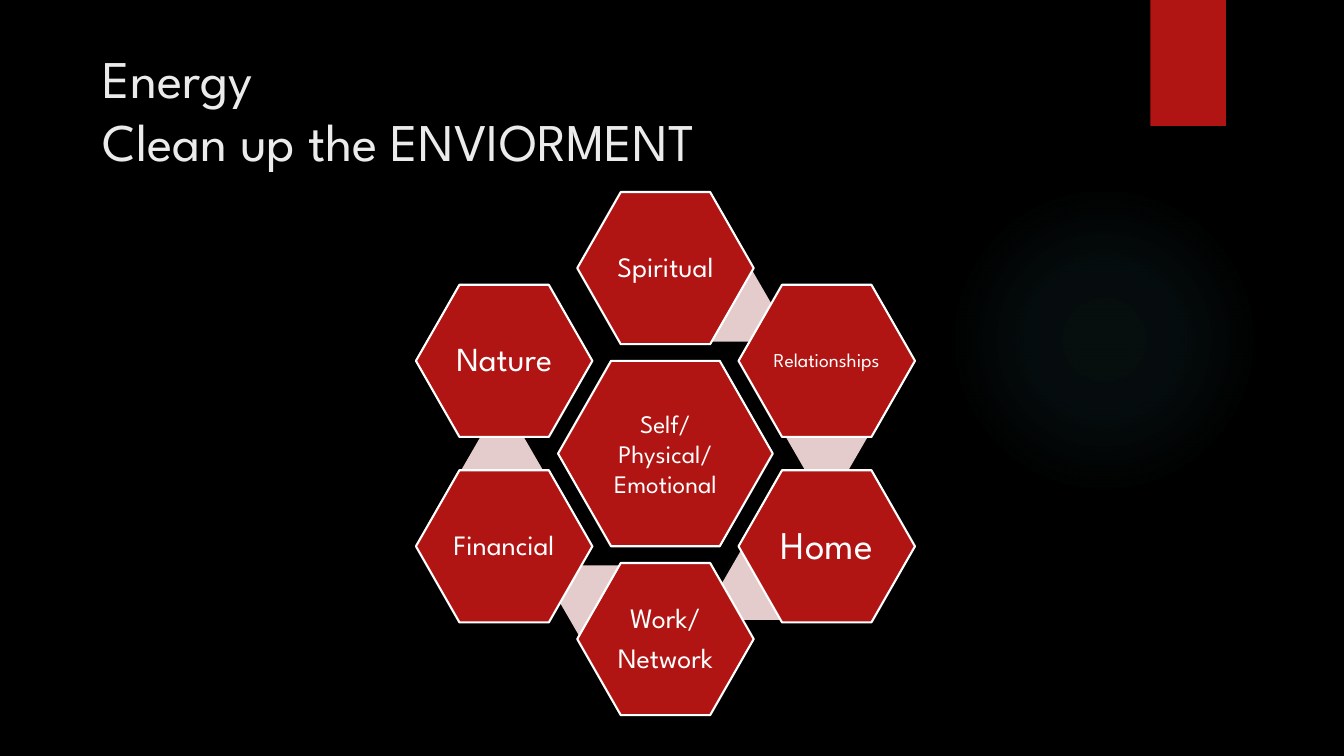
from pptx import Presentation
from pptx.dml.color import RGBColor
from pptx.enum.shapes import MSO_SHAPE
from pptx.enum.text import MSO_ANCHOR, PP_ALIGN
from pptx.oxml import parse_xml
from pptx.oxml.ns import nsdecls, qn
from pptx.util import Inches, Pt

HEXAGON, ELLIPSE, RECTANGLE = MSO_SHAPE.HEXAGON, MSO_SHAPE.OVAL, MSO_SHAPE.RECTANGLE
TOP, MIDDLE = MSO_ANCHOR.TOP, MSO_ANCHOR.MIDDLE
LEFT, CENTER = PP_ALIGN.LEFT, PP_ALIGN.CENTER

BLACK = RGBColor(0x00, 0x00, 0x00)
WHITE = RGBColor(0xFF, 0xFF, 0xFF)
OFF_WHITE = RGBColor(0xEB, 0xEB, 0xEB)
RED = RGBColor(0xB0, 0x15, 0x13)
PALE_PINK = RGBColor(0xE4, 0xCC, 0xCC)
TEAL = RGBColor(0x50, 0xB9, 0xC1)

# Hexagon ring: centre of the diagram and distance between neighbours
CENTER_X, CENTER_Y = 6.6, 4.5
COLUMN_STEP, ROW_STEP = 1.6, 0.92
CORE_SIZE, AREA_SIZE, LINK_SIZE = (2.13, 1.84), (1.75, 1.51), (0.8, 0.69)

# Label lines, text size, inset, column, row, top left of the link behind
LIFE_AREAS = [
    (["Spiritual"], 20, 0.03, 0, -2, (6.87, 2.7)),
    (["Relationships"], 14, 0.02, 1, -1, (7.8, 4)),
    (["Home"], 28, 0.04, 1, 1, (7.15, 5.46)),
    (["Work/", "Network"], 20, 0.03, 0, 2, (5.54, 5.61)),
    (["Financial"], 20, 0.03, -1, 1, (4.58, 4.31)),
    (["Nature"], 24, 0.03, -1, -1, None),
]


class EnergySlide:
    font_name = "League Spartan"

    def __init__(self, presentation):
        self.slide = presentation.slides.add_slide(presentation.slide_layouts[6])
        background = self.slide.background.fill
        background.solid()
        background.fore_color.rgb = BLACK

    def shape(self, kind, left, top, width, height, color, outlined=False):
        shape = self.slide.shapes.add_shape(
            kind, Inches(left), Inches(top), Inches(width), Inches(height))
        shape.shadow.inherit = False
        shape.fill.solid()
        shape.fill.fore_color.rgb = color
        if outlined:
            shape.line.color.rgb = WHITE
            shape.line.width = Pt(1.5)
        else:
            shape.line.fill.background()
        return shape

    def glow(self, left, top, size):
        """Draw a circle that fades out from its centre."""
        circle = self.shape(ELLIPSE, left, top, size, size, TEAL)
        stops = "".join(
            f'<a:gs pos="{place * 1000}"><a:srgbClr val="{TEAL}">'
            f'<a:alpha val="{alpha * 1000}"/></a:srgbClr></a:gs>'
            for place, alpha in [(0, 7), (36, 6), (69, 0)])
        gradient = parse_xml(
            f'<a:gradFill {nsdecls("a")} rotWithShape="1"><a:gsLst>{stops}</a:gsLst>'
            '<a:path path="circle"><a:fillToRect l="50000" t="50000" '
            'r="50000" b="50000"/></a:path></a:gradFill>')
        properties = circle._element.spPr
        properties.replace(properties.find(qn("a:solidFill")), gradient)

    def fill_text(self, frame, lines, size, color, frame_format, paragraph_format):
        for name, value in frame_format.items():
            setattr(frame, name, value)
        frame.text = "\n".join(lines)
        font_format = {"name": self.font_name, "size": Pt(size)}
        for paragraph in frame.paragraphs:
            for name, value in paragraph_format.items():
                setattr(paragraph, name, value)
            for run in paragraph.runs:
                for name, value in font_format.items():
                    setattr(run.font, name, value)
                run.font.color.rgb = color

    def title(self, text, left, top, width, height, size):
        box = self.slide.shapes.add_textbox(
            Inches(left), Inches(top), Inches(width), Inches(height))
        self.fill_text(box.text_frame, [text], size, OFF_WHITE,
                       {"word_wrap": True, "vertical_anchor": TOP}, {"alignment": LEFT})

    def hexagon(self, lines, text_size, inset, center, size, paragraph_format):
        """Draw a labelled hexagon around its centre point."""
        left, top = (middle - side / 2 for middle, side in zip(center, size))
        hexagon = self.shape(HEXAGON, left, top, *size, RED, outlined=True)
        hexagon.adjustments[0] = 0.286
        margins = {f"margin_{side}": Inches(inset)
                   for side in ("left", "top", "right", "bottom")}
        self.fill_text(hexagon.text_frame, lines, text_size, WHITE,
                       {"word_wrap": True, "vertical_anchor": MIDDLE, **margins},
                       {"alignment": CENTER, **paragraph_format})

    def link(self, left, top):
        link = self.shape(HEXAGON, left, top, *LINK_SIZE, PALE_PINK)
        link.adjustments[0] = 0.289


def main():
    presentation = Presentation()
    presentation.slide_width = Inches(13.33)
    presentation.slide_height = Inches(7.5)

    slide = EnergySlide(presentation)
    slide.glow(9.41, 1.83, 3.08)
    slide.shape(RECTANGLE, 11.41, 0, 0.75, 1.25, RED)
    slide.title("Energy\vClean up the ENVIORMENT", 0.92, 0.4, 11.5, 0.98, 37.8)

    slide.hexagon(["Self/Physical/Emotional"], 18, 0.03,
                  (CENTER_X, CENTER_Y), CORE_SIZE, {})
    for lines, text_size, inset, column, row, link_corner in LIFE_AREAS:
        if link_corner:
            slide.link(*link_corner)
        center = (CENTER_X + column * COLUMN_STEP, CENTER_Y + row * ROW_STEP)
        slide.hexagon(lines, text_size, inset, center, AREA_SIZE,
                      {"line_spacing": 0.9, "space_after": Pt(0.35 * text_size)})

    presentation.save("out.pptx")


if __name__ == "__main__":
    main()
